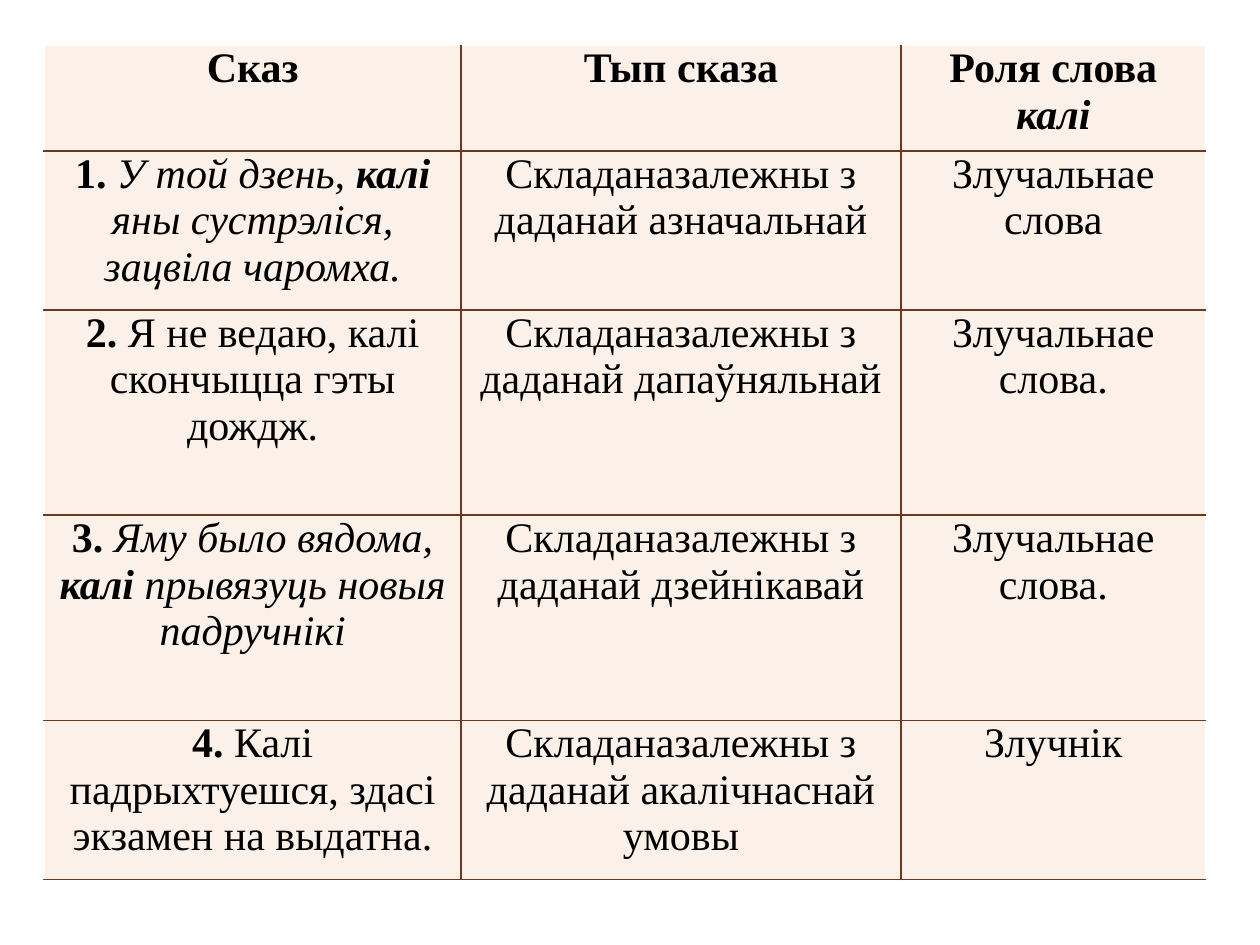
from lxml import etree
from pptx import Presentation
from pptx.dml.color import RGBColor as RGB
from pptx.enum.text import PP_ALIGN as Align
from pptx.oxml.ns import qn
from pptx.util import Inches, Pt

COLORS = {"cell": "FCF1E8", "line": "6A3A20", "edge": "FFFFFF", "text": "000000"}
COLUMNS = [33.1, 34.9, 24.2]
ROWS = [11.2, 16.8, 21.73, 21.73, 16.8]
CLAUSE = "Складаназалежны з даданай "

HEADER = [[("Сказ", "b")], [("Тып сказа", "b")],
          [("Роля слова ", "b"), ("калі", "bi")]]
SENTENCES = [
    ([("1.", "b"), (" У той дзень, ", "i"), ("калі", "bi"),
      (" яны сустрэліся, зацвіла чаромха.", "i")],
     "азначальнай", "Злучальнае слова"),
    ([("2. ", "b"), ("Я не ведаю, калі скончыцца гэты дождж.", "")],
     "дапаўняльнай", "Злучальнае слова."),
    ([("3.", "b"), (" Яму было вядома, ", "i"), ("калі", "bi"),
      (" прывязуць новыя падручнікі", "i")],
     "дзейнікавай", "Злучальнае слова."),
    ([("4. ", "b"), ("Калі падрыхтуешся, здасі экзамен на выдатна.", "")],
     "акалічнаснай умовы", "Злучнік"),
]


class Deck:
    font = "Times New Roman"
    size = Pt(24)

    def __init__(self):
        self.prs = Presentation()
        self.prs.slide_width, self.prs.slide_height = Inches(10), Inches(7.5)
        self.s = self.prs.slides.add_slide(self.prs.slide_layouts[6])

    def x(self, percent):
        return round(self.prs.slide_width * percent / 100)

    def y(self, percent):
        return round(self.prs.slide_height * percent / 100)

    def table(self, left, top, columns, rows, content):
        frame = self.s.shapes.add_table(
            len(rows), len(columns), self.x(left), self.y(top),
            self.x(sum(columns)), self.y(sum(rows)))
        table = frame.table
        for column, width in zip(table.columns, columns):
            column.width = self.x(width)
        for row, height in zip(table.rows, rows):
            row.height = self.y(height)
        for i, line in enumerate(content):
            for j, runs in enumerate(line):
                cell = table.cell(i, j)
                self.cell(cell, runs)
                outer = {"L": j == 0, "R": j == len(columns) - 1,
                         "T": i == 0, "B": False}
                self.borders(cell, outer)

    def cell(self, cell, runs):
        cell.margin_left = cell.margin_right = Inches(0.07)
        cell.margin_top = cell.margin_bottom = 0
        cell.fill.solid()
        cell.fill.fore_color.rgb = RGB.from_string(COLORS["cell"])
        p = cell.text_frame.paragraphs[0]
        p.alignment = Align.CENTER
        for text, style in runs:
            r = p.add_run()
            r.text = text
            r.font.name, r.font.size = self.font, self.size
            r.font.bold, r.font.italic = "b" in style, "i" in style
            r.font.color.rgb = RGB.from_string(COLORS["text"])

    def borders(self, cell, outer):
        props = cell._tc.get_or_add_tcPr()
        for place, side in enumerate("LRTB"):
            line = etree.Element(qn(f"a:ln{side}"), w=str(Pt(1)))
            fill = etree.SubElement(line, qn("a:solidFill"))
            color = COLORS["edge" if outer[side] else "line"]
            etree.SubElement(fill, qn("a:srgbClr"), val=color)
            props.insert(place, line)

    def save(self):
        self.prs.save("out.pptx")


def main():
    deck = Deck()
    body = [[sentence, [(CLAUSE + kind, "")], [(role, "")]]
            for sentence, kind, role in SENTENCES]
    deck.table(3.5, 4.8, COLUMNS, ROWS, [HEADER] + body)
    deck.save()


if __name__ == "__main__":
    main()
